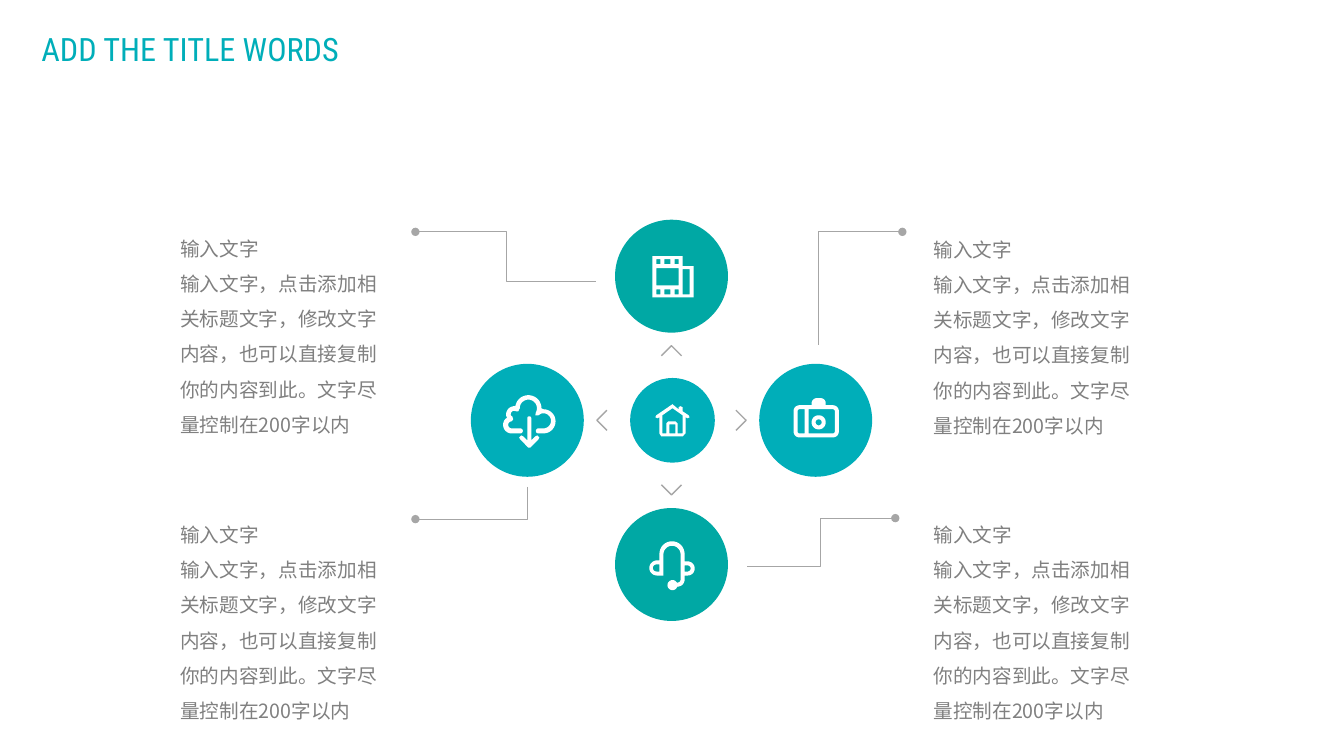
"""Slide with a hub, four satellite circles, leader lines and four notes."""
from math import cos, radians, sin

from lxml.etree import SubElement
from pptx import Presentation
from pptx.dml.color import RGBColor as RGB
from pptx.enum.shapes import MSO_SHAPE as SHAPE
from pptx.enum.text import MSO_ANCHOR as ANCHOR, MSO_AUTO_SIZE as FIT, PP_ALIGN as ALIGN
from pptx.oxml.ns import qn
from pptx.util import Inches as In, Pt

C = {k: RGB.from_string(v) for k, v in {
    "green": "00A8A4", "teal": "00AEB9", "line": "A6A6A6",
    "text": "808080", "white": "FFFFFF"}.items()}
UNITS = 1000
CX, CY = 6.66, 4.17
REACH, BIG, HUB = 1.43, 1.12, 0.84
TIP, WING = 0.74, 0.1

prs = Presentation()
prs.slide_width, prs.slide_height = In(13.33), In(7.5)
s = prs.slides.add_slide(prs.slide_layouts[5])


def arc(x, y, r, start, end):
    """Return points along a circle, angles in degrees clockwise from the right."""
    steps = max(4, abs(end - start) // 10)
    angles = [radians(start + (end - start) * i / steps) for i in range(steps + 1)]
    return [(x + r * cos(a), y + r * sin(a)) for a in angles]


def draw(contours, width=None):
    """Draw white filled contours, or an open grey line when a width is given."""
    scaled = [[(x * UNITS, y * UNITS) for x, y in c] for c in contours]
    fb = s.shapes.build_freeform(*scaled[0][0], scale=914400 / UNITS)
    for i, pts in enumerate(scaled):
        if i:
            fb.move_to(*pts[0])
        fb.add_line_segments(pts[1:], close=width is None)
    sp = fb.convert_to_shape()
    sp.shadow.inherit = False
    if width is None:
        sp.fill.solid()
        sp.fill.fore_color.rgb = C["white"]
        sp.line.fill.background()
    else:
        sp.fill.background()
        sp.line.color.rgb = C["line"]
        sp.line.width = Pt(width)
    return sp


title = s.shapes.title
title.left, title.top, title.width, title.height = In(0.32), In(0.05), In(3.36), In(0.68)
tf = title.text_frame
tf.word_wrap, tf.auto_size, tf.vertical_anchor = True, FIT.SHAPE_TO_FIT_TEXT, ANCHOR.TOP
tf.margin_left = tf.margin_right = In(0.09)
p = tf.paragraphs[0]
p.alignment, p.line_spacing = ALIGN.LEFT, 1.5
r = p.add_run()
r.text = "ADD THE TITLE WORDS"
r.font.size, r.font.name, r.font.color.rgb = Pt(23), "Roboto Condensed", C["teal"]

directions = [(0, -1, "green"), (1, 0, "teal"), (-1, 0, "teal"), (0, 1, "green")]
circles = [(CX + REACH * dx, CY + REACH * dy, BIG, color) for dx, dy, color in directions]
for x, y, size, color in circles + [(CX + 0.01, CY, HUB, "teal")]:
    sp = s.shapes.add_shape(SHAPE.OVAL, In(x - size / 2), In(y - size / 2), In(size), In(size))
    sp.shadow.inherit = False
    sp.fill.solid()
    sp.fill.fore_color.rgb = C[color]
    sp.line.fill.background()

leaders = [
    [(5.91, 2.79), (5.02, 2.79), (5.02, 2.3), (4.12, 2.3)],
    [(8.12, 3.42), (8.12, 2.3), (8.95, 2.3)],
    [(7.41, 5.62), (8.14, 5.62), (8.14, 5.14), (8.88, 5.14)],
    [(5.23, 4.83), (5.23, 5.15), (4.12, 5.15)],
]
for leader in leaders:
    sp = draw([leader], 0.75)
    SubElement(sp.line._get_or_add_ln(), qn("a:tailEnd"), type="oval")

for dx, dy, _ in directions:
    x, y = CX + (TIP - WING) * dx, CY + (TIP - WING) * dy
    draw([[(x - WING * dy, y - WING * dx), (CX + TIP * dx, CY + TIP * dy),
           (x + WING * dy, y + WING * dx)]], 1)

note = ["输入文字",
        "输入文字，点击添加相关标题文字，修改文字内容，也可以直接复制你的内容到此。文字尽量控制在200字以内"]
for x, y in [(9.16, 2.19), (9.16, 5.02), (1.69, 5.02), (1.69, 2.18)]:
    tf = s.shapes.add_textbox(In(x), In(y), In(2.21), In(2.18)).text_frame
    tf.word_wrap, tf.auto_size = True, FIT.SHAPE_TO_FIT_TEXT
    for i, text in enumerate(note):
        p = tf.add_paragraph() if i else tf.paragraphs[0]
        p.line_spacing = 1.5
        r = p.add_run()
        r.text = text
        r.font.size, r.font.name, r.font.color.rgb = Pt(14), "Noto Sans CJK SC", C["text"]
        SubElement(r._r.get_or_add_rPr(), qn("a:ea"), typeface="Noto Sans CJK SC")

film = [(6.47, 2.54), (6.77, 2.54), (6.77, 2.64), (6.88, 2.64), (6.88, 2.95), (6.47, 2.95)]
windows = [(6.51, 2.66, 6.73, 2.83), (6.77, 2.67, 6.84, 2.92)]
windows += [(left, top, right, top + 0.05) for top in (2.57, 2.87)
            for left, right in [(6.51, 6.55), (6.59, 6.65), (6.69, 6.73)]]
draw([film] + [[(l, t), (r, t), (r, b), (l, b)] for l, t, r, b in windows])

cloud = draw([
    arc(5.24, 4.05, 0.13, 0, -170) + [(5.09, 4.03)]
    + arc(5.1, 4.11, 0.08, -110, -200) + arc(5.075, 4.215, 0.085, -120, -270)
    + arc(5.16, 4.275, 0.025, 90, -90) + arc(5.075, 4.215, 0.035, 90, 270)
    + [(5.09, 4.16), (5.08, 4.13)] + arc(5.1, 4.11, 0.035, 160, 260)
    + [(5.12, 4.08), (5.14, 4.08), (5.15, 4.06)] + arc(5.24, 4.05, 0.085, 180, 390)
    + [(5.31, 4.12), (5.34, 4.12)] + arc(5.39, 4.175, 0.075, -110, 90)
    + arc(5.34, 4.275, 0.025, -90, -270) + arc(5.39, 4.18, 0.12, 90, -90)])
arrow = draw([
    [(5.31, 4.33), (5.27, 4.37)] + arc(5.25, 4.15, 0.02, 0, -180)
    + [(5.23, 4.37), (5.19, 4.33), (5.17, 4.32), (5.15, 4.34), (5.16, 4.36),
       (5.24, 4.44), (5.26, 4.44), (5.34, 4.36), (5.35, 4.34), (5.33, 4.32)]])
s.shapes.add_group_shape([cloud, arrow])

draw([
    arc(6.665, 5.495, 0.125, 0, -180) + [(6.54, 5.56)]
    + arc(6.515, 5.635, 0.075, -90, -270) + [(6.58, 5.71)]
    + arc(6.665, 5.5, 0.085, 180, 360) + arc(6.72, 5.75, 0.03, 0, 90)
    + arc(6.67, 5.805, 0.05, -30, -340) + arc(6.72, 5.75, 0.07, 90, 0)
    + [(6.79, 5.71)] + arc(6.82, 5.64, 0.07, 90, -90) + [(6.79, 5.57)],
    [(6.54, 5.67)] + arc(6.51, 5.635, 0.035, 90, 270) + [(6.54, 5.6)],
    [(6.79, 5.61)] + arc(6.82, 5.64, 0.03, -90, 90) + [(6.79, 5.67)]])

camera = draw([
    arc(8.26, 4.08, 0.06, -90, 0) + arc(8.26, 4.28, 0.06, 0, 90)
    + arc(7.93, 4.28, 0.06, 90, 180) + arc(7.93, 4.08, 0.06, 180, 270)
    + [(8.05, 4.02)] + arc(8.1, 4, 0.05, 180, 270)
    + arc(8.14, 4, 0.05, 270, 360) + [(8.19, 4.02)],
    [(7.98, 4.06), (7.98, 4.3)] + arc(7.93, 4.28, 0.02, 90, 180)
    + arc(7.93, 4.08, 0.02, 180, 270),
    [(8.02, 4.3), (8.02, 4.06)] + arc(8.26, 4.08, 0.02, -90, 0)
    + arc(8.26, 4.28, 0.02, 0, 90)])
lens = draw([arc(8.12, 4.19, radius, 0, 360) for radius in (0.07, 0.03)])
s.shapes.add_group_shape([camera, lens])

draw([
    [(6.83, 4.12), (6.77, 4.08), (6.77, 4.04), (6.75, 4.03), (6.73, 4.04), (6.73, 4.06),
     (6.67, 4.01), (6.51, 4.12), (6.5, 4.14), (6.52, 4.15), (6.54, 4.14), (6.54, 4.3),
     (6.56, 4.33), (6.77, 4.33), (6.8, 4.3), (6.8, 4.14), (6.82, 4.15), (6.84, 4.14)],
    [(6.64, 4.21), (6.7, 4.21), (6.7, 4.3), (6.64, 4.3)],
    [(6.77, 4.3), (6.72, 4.3), (6.72, 4.2), (6.7, 4.18), (6.63, 4.18), (6.61, 4.2),
     (6.61, 4.3), (6.57, 4.3), (6.57, 4.12), (6.67, 4.05), (6.77, 4.12)]])

prs.save("out.pptx")
